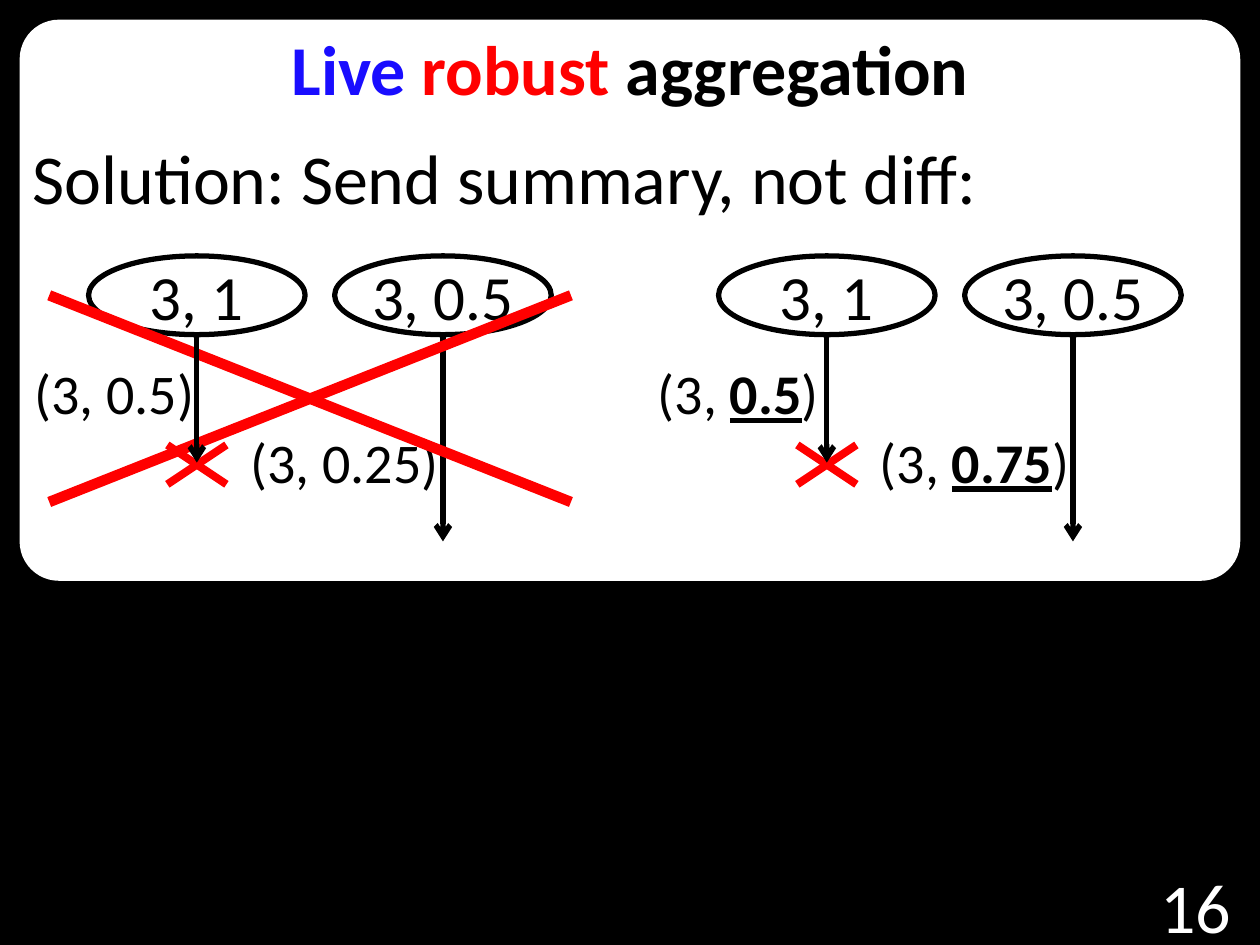
from dataclasses import dataclass

from lxml.etree import SubElement
from pptx import Presentation
from pptx.dml.color import RGBColor
from pptx.enum.shapes import MSO_CONNECTOR as CONN, MSO_SHAPE as SHAPE
from pptx.enum.text import MSO_ANCHOR as ANCHOR, MSO_AUTO_SIZE as FIT, PP_ALIGN as ALIGN
from pptx.oxml.ns import qn
from pptx.util import Inches, Pt


@dataclass(frozen=True)
class Theme:
    font: str = "Calibri"
    black: RGBColor = RGBColor(0x00, 0x00, 0x00)
    white: RGBColor = RGBColor(0xFF, 0xFF, 0xFF)
    red: RGBColor = RGBColor(0xFF, 0x00, 0x00)
    blue: RGBColor = RGBColor(0x19, 0x0D, 0xFF)
    heading: int = 40
    node: int = 36
    label: int = 32
    thin: float = 3
    medium: float = 4.5
    thick: float = 6


class Deck:
    """Draws on one slide; lengths are cells of a 64 by 48 grid."""

    COLS, ROWS = 64, 48

    def __init__(self, theme):
        self.theme = theme
        self.prs = Presentation()
        self.prs.slide_width, self.prs.slide_height = Inches(10), Inches(7.5)
        self.slide = self.prs.slides.add_slide(self.prs.slide_layouts[1])
        fill = self.slide.background.fill
        fill.solid()
        fill.fore_color.rgb = theme.black

    def x(self, cols):
        return round(self.prs.slide_width * cols / self.COLS)

    def y(self, rows):
        return round(self.prs.slide_height * rows / self.ROWS)

    def box(self, x, y, w, h):
        return self.x(x), self.y(y), self.x(w), self.y(h)

    def set_text(self, tf, runs, size, color, align=ALIGN.CENTER, bold=None):
        """Fill a frame with (text, font settings) runs in one paragraph."""
        p = tf.paragraphs[0]
        p.alignment = align
        p.space_before = Pt(0)
        p.font.name, p.font.size, p.font.bold = self.theme.font, Pt(size), bold
        p.font.color.rgb = color
        for text, settings in runs:
            r = p.add_run()
            r.text = text
            for name, value in settings.items():
                if name == "color":
                    r.font.color.rgb = value
                elif name == "bold":
                    r.font.bold = value
                elif name == "underline":
                    r.font.underline = value

    def placeholder(self, index, bounds, runs, **style):
        sp = self.slide.placeholders[index]
        sp.left, sp.top, sp.width, sp.height = self.box(*bounds)
        tf = sp.text_frame
        tf.auto_size, tf.vertical_anchor = FIT.NONE, ANCHOR.TOP
        self.set_text(tf, runs, self.theme.heading, self.theme.black, **style)
        # Keep the text in front of the panel drawn before it.
        sp.element.getparent().append(sp.element)
        return sp

    def title(self, bounds, runs):
        self.placeholder(0, bounds, runs, bold=True)

    def statement(self, bounds, text):
        """Body text without bullet or indent."""
        sp = self.placeholder(1, bounds, [(text, {})], align=ALIGN.LEFT)
        props = sp.element.txBody.p_lst[0].get_or_add_pPr()
        props.set("marL", "0")
        props.set("indent", "0")
        props.insert_element_before(props.makeelement(qn("a:buNone")), "a:defRPr")

    def shape(self, kind, bounds, fill=None, line=None):
        sp = self.slide.shapes.add_shape(kind, *self.box(*bounds))
        sp.shadow.inherit = False
        if fill is None:
            sp.fill.background()
        else:
            sp.fill.solid()
            sp.fill.fore_color.rgb = fill
        if line is None:
            sp.line.fill.background()
        else:
            sp.line.color.rgb, sp.line.width = line, Pt(self.theme.thin)
        return sp

    def panel(self, bounds, radius):
        sp = self.shape(SHAPE.ROUNDED_RECTANGLE, bounds, fill=self.theme.white)
        sp.adjustments[0] = radius

    def page_number(self, bounds, text):
        t = self.theme
        sp = self.shape(SHAPE.ROUNDED_RECTANGLE, bounds, fill=t.black)
        sp.text_frame.vertical_anchor = ANCHOR.MIDDLE
        self.set_text(sp.text_frame, [(text, {})], t.heading, t.white)

    def node(self, x, y, text):
        t = self.theme
        tf = self.shape(SHAPE.OVAL, (x, y, 11, 4), line=t.black).text_frame
        tf.margin_left = tf.margin_right = tf.margin_top = tf.margin_bottom = 0
        tf.word_wrap, tf.vertical_anchor = False, ANCHOR.MIDDLE
        self.set_text(tf, [(text, {})], t.node, t.black)

    def label(self, x, y, w, number, emphasis):
        tf = self.slide.shapes.add_textbox(*self.box(x, y, w, 4.1)).text_frame
        tf.word_wrap = False
        runs = [("(3, ", {}), (number, emphasis), (")", {})]
        self.set_text(tf, runs, self.theme.label, self.theme.black)

    def line(self, x1, y1, x2, y2, color, width):
        cn = self.slide.shapes.add_connector(
            CONN.STRAIGHT, self.x(x1), self.y(y1), self.x(x2), self.y(y2))
        cn.line.color.rgb, cn.line.width = color, Pt(width)
        SubElement(cn.element.spPr, qn("a:effectLst"))
        return cn

    def arrow(self, x, y1, y2):
        cn = self.line(x, y1, x, y2, self.theme.black, self.theme.thin)
        SubElement(cn.element.spPr.find(qn("a:ln")), qn("a:tailEnd"), type="arrow")

    def cross(self, x1, y1, x2, y2, width):
        self.line(x1, y1, x2, y2, self.theme.red, width)
        self.line(x2, y1, x1, y2, self.theme.red, width)

    def exchange(self, x, second, first_label, emphasis, rejected=False):
        """Two nodes sending values; the first message is lost."""
        t = self.theme
        self.node(x + 4.5, 13, "3, 1")
        self.node(x + 17, 13, "3, 0.5")
        left, width = first_label
        self.label(x + left, 17.9, width, "0.5", emphasis)
        self.arrow(x + 22.5, 17, 27.5)
        self.label(x + 12, 21.4, 11, second, emphasis)
        if rejected:
            self.cross(x + 2.5, 15, x + 29, 25.5, t.thick)
        self.cross(x + 8.5, 22.6, x + 11.5, 24.6, t.medium)
        self.arrow(x + 10, 17, 23.5)


def main():
    t = Theme()
    deck = Deck(t)
    deck.page_number((57.5, 44, 6.5, 4), "16")
    deck.panel((1, 1, 62, 28.5), 0.07)
    deck.title((1, 1, 62, 5), [("Live ", {"color": t.blue}),
                               ("robust", {"color": t.red}),
                               (" aggregation", {})])
    deck.statement((1, 6.5, 62, 5), "Solution: Send summary, not diff:")
    deck.exchange(0, "0.25", (1.1, 9.4), {}, rejected=True)
    deck.exchange(32, "0.75", (0.5, 10), {"bold": True, "underline": True})
    deck.prs.save("out.pptx")


if __name__ == "__main__":
    main()
